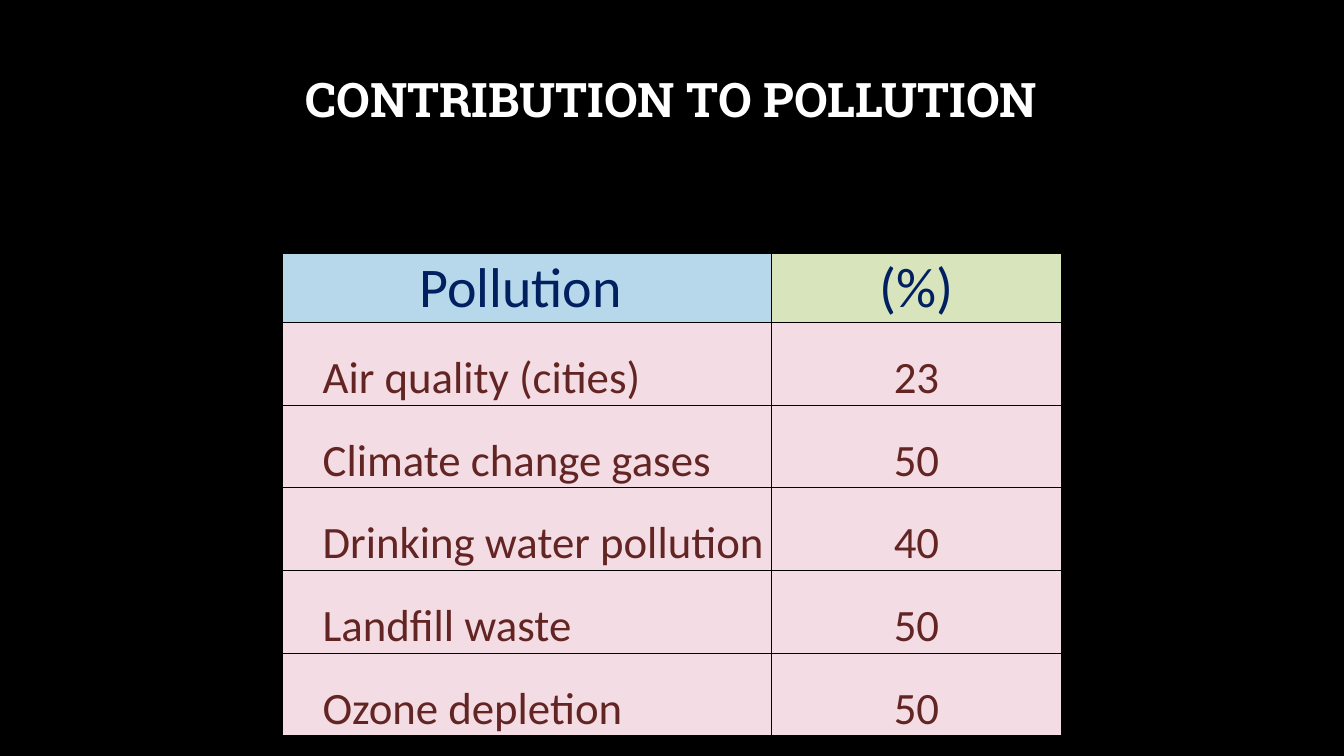
from dataclasses import dataclass

from lxml.etree import SubElement
from pptx import Presentation
from pptx.dml.color import RGBColor
from pptx.enum.text import MSO_ANCHOR as Anchor, PP_ALIGN as Align
from pptx.oxml.ns import qn
from pptx.util import Inches, Pt


@dataclass(frozen=True)
class Theme:
    background: str = "000000"
    title: str = "FFFFFF"
    header: str = "002060"
    body: str = "632523"
    border: str = "000000"
    header_fills: tuple = ("B7D7EB", "D7E4BC")
    body_fill: str = "F3DCE3"
    title_font: str = "Roboto Slab"
    table_font: str = "Calibri"
    title_size: int = 34
    header_size: int = 40
    body_size: int = 32
    border_width: float = 0.5


theme = Theme()


def write(frame, text, font, size, color, bold=False, align=Align.CENTER,
          spacing=1.0, indent=0, anchor=Anchor.BOTTOM):
    """Fill a text frame's first paragraph with one formatted span."""
    frame.word_wrap = True
    frame.vertical_anchor = anchor
    para = frame.paragraphs[0]
    para.alignment = align
    para.line_spacing = spacing
    if indent:
        properties = para._p.get_or_add_pPr()
        properties.set("marL", "0")
        properties.set("indent", str(Inches(indent)))
    span = para.add_run()
    span.text = text
    span.font.name = font
    span.font.size = Pt(size)
    span.font.bold = bold
    span.font.color.rgb = RGBColor.from_string(color)


def style_cell(cell, fill):
    """Set a cell's margins, thin borders and fill."""
    cell.margin_left = cell.margin_right = cell.margin_top = Inches(0.01)
    cell.margin_bottom = 0
    properties = cell._tc.get_or_add_tcPr()
    for side in ("a:lnL", "a:lnR", "a:lnT", "a:lnB"):
        line = SubElement(properties, qn(side), w=str(Pt(theme.border_width)))
        solid = SubElement(line, qn("a:solidFill"))
        SubElement(solid, qn("a:srgbClr"), val=theme.border)
    cell.fill.solid()
    cell.fill.fore_color.rgb = RGBColor.from_string(fill)


deck = Presentation()
deck.slide_width, deck.slide_height = Inches(13.33), Inches(7.5)
page = deck.slides.add_slide(deck.slide_layouts[6])
page.background.fill.solid()
page.background.fill.fore_color.rgb = RGBColor.from_string(theme.background)

title_box = page.shapes.add_textbox(Inches(1), Inches(0.29), Inches(11.32), Inches(1.45))
write(title_box.text_frame, "CONTRIBUTION TO POLLUTION", theme.title_font,
      theme.title_size, theme.title, bold=True, spacing=0.9, anchor=Anchor.MIDDLE)

rows = [
    ("Pollution ", "(%)"),
    ("Air quality (cities)", "23"),
    ("Climate change gases", "50"),
    ("Drinking water pollution", "40"),
    ("Landfill waste", "50"),
    ("Ozone depletion", "50"),
]
column_widths = (4.85, 2.88)
header_height, body_height = 0.69, 0.82
table_height = header_height + body_height * (len(rows) - 1)

table = page.shapes.add_table(
    len(rows), len(column_widths), Inches(2.8), Inches(2.51),
    Inches(sum(column_widths)), Inches(table_height)).table
for column, width in zip(table.columns, column_widths):
    column.width = Inches(width)

for row_index, texts in enumerate(rows):
    is_header = row_index == 0
    table.rows[row_index].height = Inches(header_height if is_header else body_height)
    for column_index, text in enumerate(texts):
        cell = table.cell(row_index, column_index)
        style_cell(cell, theme.header_fills[column_index] if is_header else theme.body_fill)
        cell.vertical_anchor = Anchor.BOTTOM
        is_label = column_index == 0 and not is_header
        write(cell.text_frame, text, theme.table_font,
              theme.header_size if is_header else theme.body_size,
              theme.header if is_header else theme.body,
              align=Align.LEFT if is_label else Align.CENTER,
              spacing=1.0 if is_header else 1.5,
              indent=0.39 if is_label else 0)

deck.save("out.pptx")
